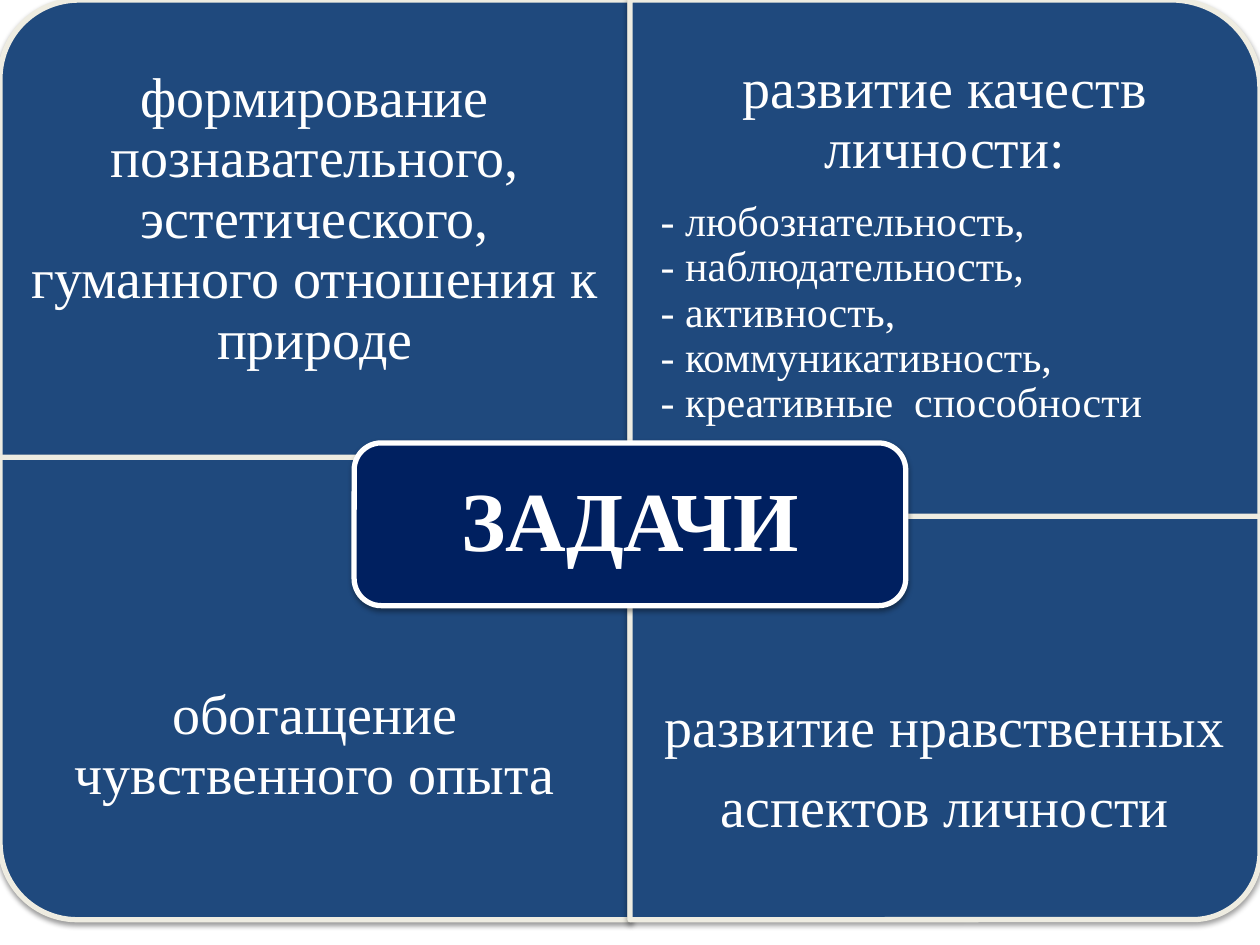
from lxml import etree
from pptx import Presentation
from pptx import util as u
from pptx.dml.color import RGBColor
from pptx.enum import shapes, text
from pptx.oxml import ns

FONT = "Times New Roman"
WIDE, HIGH = 25.4, 19.05
HALF = WIDE / 2
TITLE = "ЗАДАЧИ"
TRAITS = [
    "- любознательность,",
    "- наблюдательность,",
    "- активность,",
    "- коммуникативность,",
    "- креативные  способности",
]
TASKS = [
    {"col": 0, "top": 0, "high": 9.53, "turn": 270, "box": (0.87, 7.14),
     "lines": ["формирование познавательного, эстетического, гуманного отношения к природе"]},
    {"col": 1, "top": 0, "high": 10.72, "turn": 0, "box": (0.89, 8.03),
     "lines": ["развитие качеств личности:"], "list": TRAITS},
    {"col": 0, "top": 9.22, "high": 9.32, "turn": 180, "box": (11.56, 6.98),
     "lines": ["обогащение чувственного опыта"]},
    {"col": 1, "top": 10.41, "high": 8.13, "turn": 90, "box": (12.46, 6.1),
     "lines": ["развитие нравственных", "аспектов личности"]},
]


def rgb(code):
    return RGBColor.from_string(code)


def shade(shape):
    shape.shadow.inherit = False
    glow = shape._element.spPr.find(ns.qn("a:effectLst"))
    drop = etree.SubElement(glow, ns.qn("a:outerShdw"), blurRad=str(u.Pt(3.1)),
                            dist=str(u.Pt(1.6)), dir="5400000", rotWithShape="0")
    tone = etree.SubElement(drop, ns.qn("a:srgbClr"), val="000000")
    etree.SubElement(tone, ns.qn("a:alpha"), val="38000")


def panel(slide, kind, left, top, wide, high, fill, line, turn=0):
    if turn % 180:
        left, top = left + (wide - high) / 2, top + (high - wide) / 2
        wide, high = high, wide
    shape = slide.shapes.add_shape(kind, u.Cm(left), u.Cm(top), u.Cm(wide), u.Cm(high))
    shape.rotation = turn
    shape.fill.solid()
    shape.fill.fore_color.rgb = rgb(fill)
    shape.line.color.rgb = rgb(line)
    shape.line.width = u.Pt(3)
    shade(shape)


def frame(slide, left, top, wide, high, pad):
    body = slide.shapes.add_textbox(u.Cm(left), u.Cm(top), u.Cm(wide), u.Cm(high)).text_frame
    body.word_wrap = True
    body.vertical_anchor = text.MSO_ANCHOR.MIDDLE
    body.margin_left = body.margin_right = u.Cm(pad)
    body.margin_top = body.margin_bottom = u.Cm(pad)
    return body


def write(body, words, size=32, bold=False, align=text.PP_ALIGN.CENTER):
    first = body.paragraphs[0]
    para = body.add_paragraph() if first.runs else first
    para.text = words
    para.alignment = align
    para.line_spacing = 0.9
    para.space_after = u.Pt(11.2)
    for run in para.runs:
        font = run.font
        font.name, font.size, font.bold = FONT, u.Pt(size), bold
        font.color.rgb = rgb("FFFFFF")


def main():
    deck = Presentation()
    deck.slide_width, deck.slide_height = u.Cm(WIDE), u.Cm(HIGH)
    slide = deck.slides.add_slide(deck.slide_layouts[6])
    kind = shapes.MSO_SHAPE
    for task in TASKS:
        left = task["col"] * HALF
        panel(slide, kind.ROUND_1_RECTANGLE, left, task["top"], HALF, task["high"],
              "1F497D", "EEECE1", task["turn"])
        top, high = task["box"]
        body = frame(slide, left, top, HALF, high, 0.62)
        for line in task["lines"]:
            write(body, line)
        if "list" in task:
            write(body, "\v".join(task["list"]), size=24, align=text.PP_ALIGN.LEFT)
    wide, high, top = 11.12, 3.28, 8.93
    left = (WIDE - wide) / 2
    panel(slide, kind.ROUNDED_RECTANGLE, left, top, wide, high, "002060", "FFFFFF")
    write(frame(slide, left, top, wide, high, 0.51), TITLE, size=48, bold=True)
    deck.save("out.pptx")


if __name__ == "__main__":
    main()
